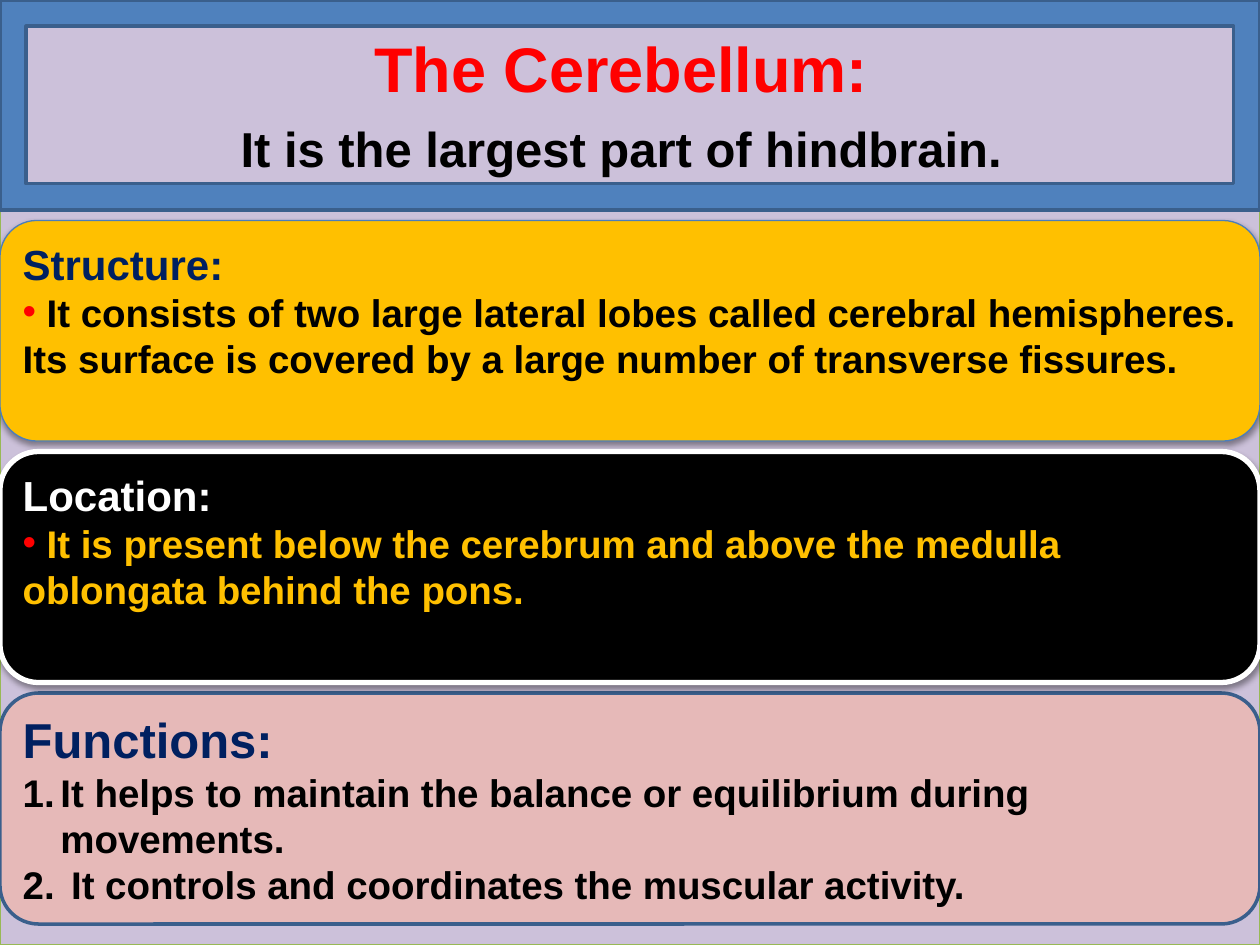
from dataclasses import dataclass

from lxml import etree
from pptx import Presentation
from pptx.dml.color import RGBColor
from pptx.enum.shapes import MSO_SHAPE
from pptx.enum.text import MSO_ANCHOR, MSO_AUTO_SIZE, PP_ALIGN
from pptx.oxml.ns import qn
from pptx.util import Inches, Pt

RECT, FRAME, ROUNDED = MSO_SHAPE.RECTANGLE, MSO_SHAPE.FRAME, MSO_SHAPE.ROUNDED_RECTANGLE
TOP, MIDDLE = MSO_ANCHOR.TOP, MSO_ANCHOR.MIDDLE
LEFT, CENTER = PP_ALIGN.LEFT, PP_ALIGN.CENTER
NO_AUTOFIT = MSO_AUTO_SIZE.NONE
COMPARISON_LAYOUT = 4
BULLET = ("a:buChar", {"char": "•"})
NUMBER = ("a:buAutoNum", {"type": "arabicPeriod"})
PLAIN = ("a:buNone", {})


@dataclass(frozen=True)
class Theme:
    """Colours, type sizes and spacing of the slide."""
    font: str = "Arial"
    lilac: str = "CCC1DA"
    green: str = "98B955"
    pink: str = "E6B9B8"
    blue: str = "4F81BD"
    edge_blue: str = "3A5F8C"
    thin_blue: str = "4B7EBC"
    amber: str = "FFC000"
    navy: str = "002060"
    red: str = "FF0000"
    black: str = "000000"
    white: str = "FFFFFF"
    title: int = 36
    subtitle: int = 28
    heading: int = 24
    text: int = 22
    side: float = 0.18
    top: float = 0.14
    hanging: float = 0.3


class CerebellumSlide:
    """Draws full-width bands on a grid of 90 rows."""

    ROWS = 90

    def __init__(self, theme):
        """Open a Comparison slide and collect its placeholders."""
        self.theme = theme
        self.deck = Presentation()
        self.deck.slide_width, self.deck.slide_height = Inches(10), Inches(7.5)
        self.slide = self.deck.slides.add_slide(self.deck.slide_layouts[COMPARISON_LAYOUT])
        self.unused = list(self.slide.placeholders)

    def cell(self, row, rows):
        """Return left, top, width and height of a full-width band."""
        unit = self.deck.slide_height / self.ROWS
        return 0, round(row * unit), self.deck.slide_width, round(rows * unit)

    def band(self, kind, row, rows, fill, line, weight, shadow=False):
        """Add a filled band with an outline and an optional soft shadow."""
        band = self.slide.shapes.add_shape(kind, *self.cell(row, rows))
        band.fill.solid()
        band.fill.fore_color.rgb = RGBColor.from_string(fill)
        band.line.color.rgb = RGBColor.from_string(line)
        band.line.width = Pt(weight)
        band.shadow.inherit = False
        if shadow:
            effects = band._element.spPr.find(qn("a:effectLst"))
            outer = etree.SubElement(effects, qn("a:outerShdw"), blurRad="40000",
                                     dist="20000", dir="5400000", rotWithShape="0")
            colour = etree.SubElement(outer, qn("a:srgbClr"), val=self.theme.black)
            etree.SubElement(colour, qn("a:alpha"), val="38000")

    def text(self, row, rows, anchor, align, paragraphs):
        """Fill the next placeholder with paragraphs of a marker and runs."""
        holder = self.unused.pop(0)
        holder.left, holder.top, holder.width, holder.height = self.cell(row, rows)
        self.slide.shapes._spTree.append(holder._element)
        frame = holder.text_frame
        frame.word_wrap, frame.auto_size = True, NO_AUTOFIT
        frame.vertical_anchor = anchor
        frame.margin_left = frame.margin_right = Inches(self.theme.side)
        frame.margin_top = frame.margin_bottom = Inches(self.theme.top)
        for index, (marker, runs) in enumerate(paragraphs):
            paragraph = frame.add_paragraph() if index else frame.paragraphs[0]
            self.paragraph(paragraph, align, marker, runs)

    def paragraph(self, paragraph, align, marker, runs):
        """Set spacing, indent and marker, then add the runs."""
        paragraph.alignment = align
        paragraph.space_before = paragraph.space_after = Pt(0)
        indent = Inches(self.theme.hanging) if marker is NUMBER else 0
        properties = paragraph._p.get_or_add_pPr()
        properties.set("marL", str(indent))
        properties.set("indent", str(-indent))
        tag, attributes = marker
        etree.SubElement(properties, qn(tag), attributes)
        for words, size, colour in runs:
            run = paragraph.add_run()
            run.text = words
            run.font.name, run.font.size, run.font.bold = self.theme.font, Pt(size), True
            run.font.color.rgb = RGBColor.from_string(colour)

    def save(self):
        """Remove the empty placeholders and write the deck."""
        for holder in self.unused:
            self.slide.shapes._spTree.remove(holder._element)
        self.deck.save("out.pptx")


def main():
    """Build the Cerebellum slide."""
    theme = Theme()
    page = CerebellumSlide(theme)
    header, structure, location, functions = (0, 20), (21, 21), (43, 22), (66, 22)

    page.band(RECT, 0, page.ROWS, theme.lilac, theme.green, 0.75, shadow=True)
    page.band(ROUNDED, *functions, theme.pink, theme.edge_blue, 2)
    page.band(FRAME, *header, theme.blue, theme.edge_blue, 2)
    page.band(ROUNDED, *structure, theme.amber, theme.thin_blue, 0.75, shadow=True)
    page.band(ROUNDED, *location, theme.black, theme.white, 3, shadow=True)

    page.text(*header, MIDDLE, CENTER, [
        (PLAIN, [("The Cerebellum: ", theme.title, theme.red)]),
        (PLAIN, [("It is the largest part of hindbrain.", theme.subtitle, theme.black),
                 (" ", theme.title, theme.red)]),
    ])
    topics = [
        (structure, "Structure:", theme.navy, theme.black,
         "It consists of two large lateral lobes called cerebral hemispheres. "
         "Its surface is covered by a large number of transverse fissures."),
        (location, "Location:", theme.white, theme.amber,
         "It is present below the cerebrum and above the medulla oblongata behind the pons."),
    ]
    for place, heading, heading_colour, fact_colour, fact in topics:
        page.text(*place, TOP, LEFT, [
            (PLAIN, [(heading, theme.heading, heading_colour)]),
            (BULLET, [(" ", theme.text, theme.red), (fact, theme.text, fact_colour)]),
        ])
    roles = ["It helps to maintain the balance or equilibrium during movements.",
             " It controls and coordinates the muscular activity."]
    page.text(*functions, MIDDLE, LEFT,
              [(PLAIN, [("Functions:", theme.subtitle, theme.navy)])]
              + [(NUMBER, [(role, theme.text, theme.black)]) for role in roles])
    page.save()


if __name__ == "__main__":
    main()
